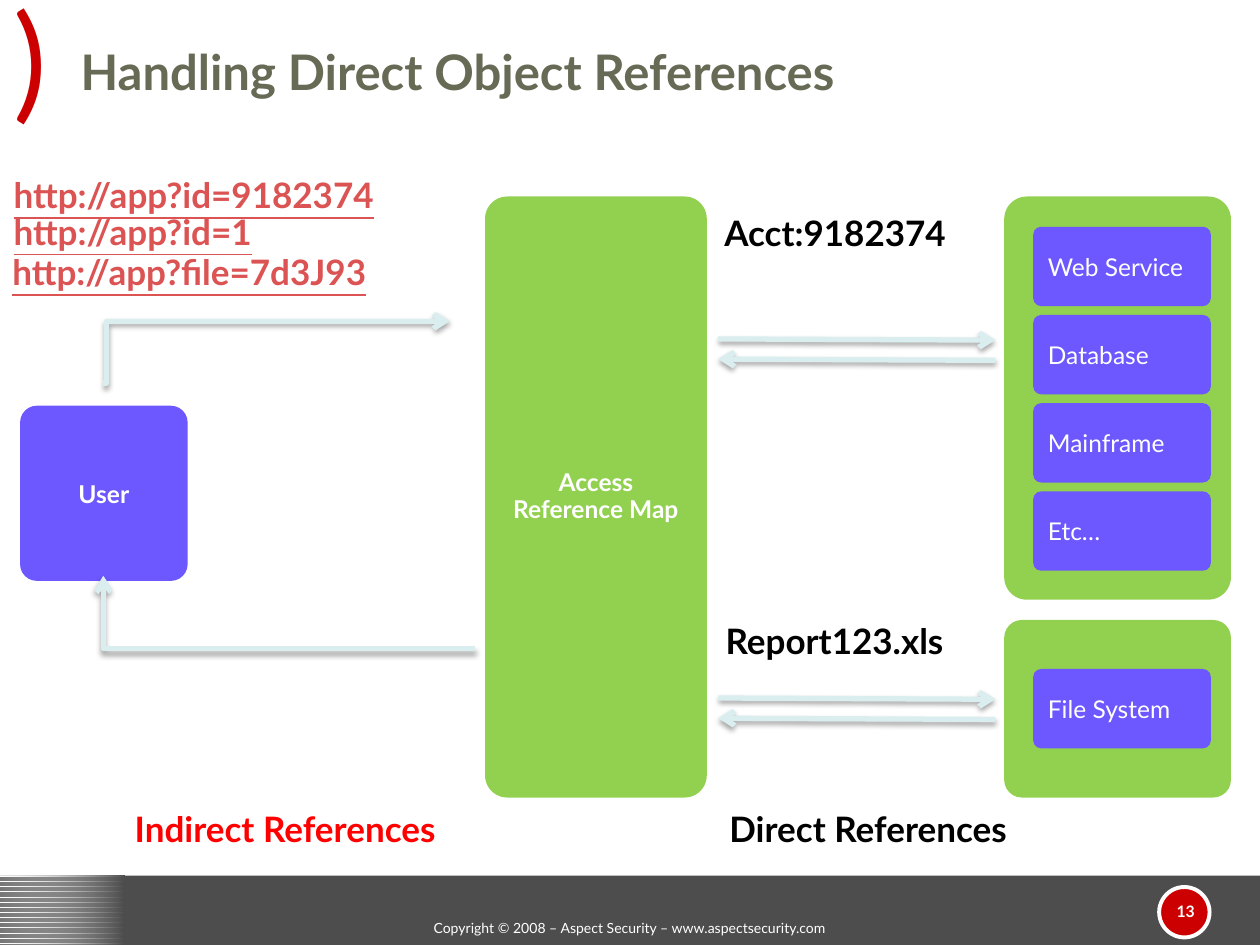
"""Build the slide on mapping indirect references to direct object references."""
from dataclasses import dataclass

from lxml.etree import SubElement
from pptx import Presentation
from pptx.dml.color import RGBColor
from pptx.enum.dml import MSO_PATTERN
from pptx.enum.shapes import MSO_CONNECTOR, MSO_SHAPE
from pptx.enum.text import MSO_ANCHOR, MSO_AUTO_SIZE, PP_ALIGN
from pptx.oxml.ns import qn
from pptx.util import Inches, Pt

FONT = "Lato"
COLORS = {
    "white": "FFFFFF", "black": "000000", "bar": "4D4D4D", "badge": "CC0000",
    "title": "676A55", "green": "92D050", "violet": "6C58FE",
    "arrow": "DAEDEF", "link": "DB5353", "red": "FF0000",
}


@dataclass
class Box:
    left: float
    top: float
    width: float
    height: float
    color: str
    text: str = ""
    bold: bool = False
    align: PP_ALIGN = PP_ALIGN.LEFT
    spacing: float = 1.0


@dataclass
class Label:
    text: str
    left: float
    top: float
    width: float
    color: str = "black"
    underline: bool = False


@dataclass
class Arrow:
    start: tuple[float, float]
    end: tuple[float, float]
    bend: float | None = None


def rgb(name: str) -> RGBColor:
    return RGBColor.from_string(COLORS[name])


def write(tf, text: str, *, size: float, color: str, bold: bool = False,
          underline: bool = False, align: PP_ALIGN = PP_ALIGN.LEFT,
          anchor: MSO_ANCHOR = MSO_ANCHOR.TOP, wrap: bool = True,
          spacing: float = 1.0) -> None:
    tf.word_wrap = wrap
    tf.auto_size = MSO_AUTO_SIZE.NONE if wrap else MSO_AUTO_SIZE.SHAPE_TO_FIT_TEXT
    tf.vertical_anchor = anchor
    p = tf.paragraphs[0]
    p.alignment = align
    p.line_spacing = spacing
    r = p.add_run()
    r.text = text
    r.font.name = FONT
    r.font.size = Pt(size)
    r.font.bold = bold
    r.font.underline = underline
    r.font.color.rgb = rgb(color)


def add_text(s, left: float, top: float, width: float, height: float,
             text: str, **fmt) -> None:
    sp = s.shapes.add_textbox(Inches(left), Inches(top), Inches(width), Inches(height))
    write(sp.text_frame, text, **fmt)


def add_plain(s, kind: MSO_SHAPE, left: float, top: float, width: float,
              height: float, color: str | None = None):
    sp = s.shapes.add_shape(kind, Inches(left), Inches(top), Inches(width), Inches(height))
    sp.shadow.inherit = False
    sp.line.fill.background()
    if color:
        sp.fill.solid()
        sp.fill.fore_color.rgb = rgb(color)
    return sp


def add_box(s, box: Box) -> None:
    sp = add_plain(s, MSO_SHAPE.ROUNDED_RECTANGLE, box.left, box.top,
                   box.width, box.height, box.color)
    sp.adjustments[0] = 0.1
    if box.text:
        write(sp.text_frame, box.text, size=14, color="white", bold=box.bold,
              align=box.align, anchor=MSO_ANCHOR.MIDDLE, spacing=box.spacing)


def add_arrow(s, arrow: Arrow) -> None:
    kind = MSO_CONNECTOR.STRAIGHT if arrow.bend is None else MSO_CONNECTOR.ELBOW
    ends = [Inches(v) for v in (*arrow.start, *arrow.end)]
    cxn = s.shapes.add_connector(kind, *ends)
    cxn.line.color.rgb = rgb("arrow")
    cxn.line.width = Pt(3)
    sp_pr = cxn._element.spPr
    SubElement(sp_pr.find(qn("a:ln")), qn("a:tailEnd"), type="arrow")
    effects = SubElement(sp_pr, qn("a:effectLst"))
    shadow = SubElement(effects, qn("a:outerShdw"), blurRad=str(Pt(3.1)),
                        dist=str(Pt(1.8)), dir="5400000", rotWithShape="0")
    tint = SubElement(shadow, qn("a:srgbClr"), val=COLORS["black"])
    SubElement(tint, qn("a:alpha"), val="35000")
    if arrow.bend is not None:
        guides = sp_pr.find(qn("a:prstGeom")).get_or_add_avLst()
        SubElement(guides, qn("a:gd"), name="adj1",
                   fmla=f"val {round(arrow.bend * 100000)}")


def add_frame(s) -> None:
    add_plain(s, MSO_SHAPE.RECTANGLE, 0, 6.95, 10, 0.55, "bar")
    stripes = add_plain(s, MSO_SHAPE.RECTANGLE, 0, 6.95, 0.99, 0.55)
    stripes.fill.patterned()
    stripes.fill.pattern = MSO_PATTERN.DARK_HORIZONTAL
    stripes.fill.fore_color.rgb = rgb("bar")
    stripes.fill.back_color.rgb = rgb("white")
    fade = add_plain(s, MSO_SHAPE.RECTANGLE, 0, 6.95, 0.99, 0.55)
    fade.fill.gradient()
    fade.fill.gradient_angle = 0
    for stop, color in zip(fade.fill.gradient_stops, ("white", "bar")):
        stop.color.rgb = rgb(color)
    first = fade._element.xpath(".//a:gs/a:srgbClr")[0]
    SubElement(first, qn("a:alpha"), val="23000")
    badge = add_plain(s, MSO_SHAPE.OVAL, 9.2, 7.04, 0.4, 0.4, "badge")
    badge.line.color.rgb = rgb("white")
    badge.line.width = Pt(2.25)
    add_text(s, 0.01, -0.2, 0.57, 1.3, ")", size=72, color="badge", wrap=False)
    add_text(s, 0, 7.25, 10, 0.25,
             "Copyright © 2008 – Aspect Security – www.aspectsecurity.com",
             size=8, color="white", align=PP_ALIGN.CENTER)
    add_text(s, 9.2, 7.03, 0.42, 0.4, "13", size=9, color="white", bold=True,
             align=PP_ALIGN.CENTER, anchor=MSO_ANCHOR.MIDDLE)


def add_title(s, text: str) -> None:
    sp = s.shapes.title
    sp.left, sp.top, sp.width, sp.height = (Inches(v) for v in (0.54, 0.17, 9.46, 0.68))
    write(sp.text_frame, text, size=28, color="title", bold=True,
          anchor=MSO_ANCHOR.BOTTOM)


SERVICES = ["Web Service", "Database", "Mainframe", "Etc…"]
BOXES = [
    Box(7.97, 4.92, 1.8, 1.41, "green"),
    Box(7.97, 1.56, 1.8, 3.2, "green"),
    Box(3.85, 1.56, 1.76, 4.77, "green", "Access Reference Map", True,
        PP_ALIGN.CENTER, 0.9),
    *(Box(8.2, 1.8 + 0.7 * i, 1.41, 0.63, "violet", name)
      for i, name in enumerate(SERVICES)),
    Box(8.2, 5.31, 1.41, 0.63, "violet", "File System"),
    Box(0.16, 3.22, 1.33, 1.39, "violet", "User", True, PP_ALIGN.CENTER),
]
ARROWS = [
    Arrow((0.82, 3.04), (3.57, 2.55), 0.01),
    Arrow((3.77, 5.15), (0.82, 4.57), 0.999),
]
for y in (2.69, 5.54):
    ARROWS += [Arrow((5.7, y), (7.9, y + 0.01)),
               Arrow((7.9, y + 0.17), (5.7, y + 0.16))]
LABELS = [
    Label("http://app?id=9182374", 0.01, 1.33, 3.72, "link", True),
    Label("http://app?id=1", 0.01, 1.62, 2.57, "link", True),
    Label("http://app?file=7d3J93", 0, 1.94, 3.68, "link", True),
    Label("Acct:9182374", 5.65, 1.63, 2.16),
    Label("Report123.xls", 5.66, 4.87, 2.18),
    Label("Indirect References", 0.97, 6.36, 2.98, "red"),
    Label("Direct References", 5.69, 6.36, 2.7),
]


def main() -> None:
    prs = Presentation()
    prs.slide_width, prs.slide_height = Inches(10), Inches(7.5)
    s = prs.slides.add_slide(prs.slide_layouts[5])
    add_frame(s)
    add_title(s, "Handling Direct Object References")
    for box in BOXES:
        add_box(s, box)
    for arrow in ARROWS:
        add_arrow(s, arrow)
    for label in LABELS:
        add_text(s, label.left, label.top, label.width, 0.44, label.text, size=20,
                 color=label.color, bold=True, underline=label.underline, wrap=False)
    prs.save("out.pptx")


if __name__ == "__main__":
    main()
